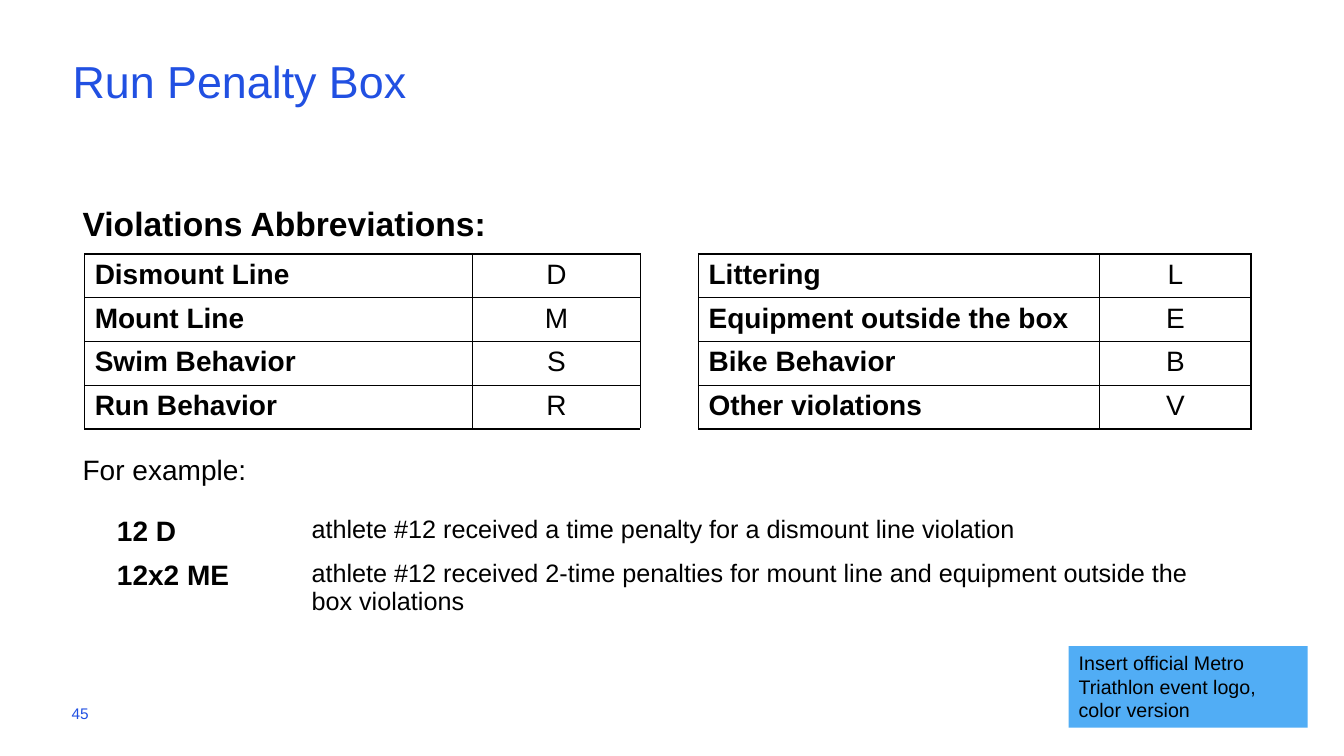
"""Build the Run Penalty Box slide with its violation and example tables."""
from dataclasses import dataclass

from lxml.etree import SubElement
from pptx import Presentation
from pptx.dml.color import RGBColor
from pptx.enum.shapes import MSO_SHAPE
from pptx.enum.text import MSO_ANCHOR, MSO_AUTO_SIZE, PP_ALIGN
from pptx.oxml.ns import qn
from pptx.util import Inches, Pt

TITLE = "Run Penalty Box"
HEADING = "Violations Abbreviations:"
EXAMPLE_HEADING = "For example:"
PAGE_NUMBER = "45"
LOGO_NOTE = ["Insert official Metro Triathlon event logo,", "color version"]
VIOLATIONS = [
    ("Dismount Line", "D", "", "Littering", "L"),
    ("Mount Line", "M", "", "Equipment outside the box", "E"),
    ("Swim Behavior", "S", "", "Bike Behavior", "B"),
    ("Run Behavior", "R", "", "Other violations", "V"),
]
EXAMPLES = [
    ("12 D", "athlete #12 received a time penalty for a dismount line violation"),
    ("12x2 ME", "athlete #12 received 2-time penalties for mount line and "
                "equipment outside the box violations"),
]


@dataclass(frozen=True)
class Theme:
    """Colours, font and type sizes of the slide."""
    font: str = "Arial"
    blue: str = "2150E2"
    panel: str = "51ADF5"
    black: str = "000000"
    title: int = 32
    heading: int = 24
    body: int = 20
    detail: int = 18
    note: int = 14
    number: int = 11


THEME = Theme()
WIDTH, HEIGHT = Inches(13.33), Inches(7.5)

# Percentages of the slide: left, top, width, height
TITLE_BOX = (5.4, 3.47, 86.27, 15.2)
BODY_BOX = (5.4, 24, 90.77, 41.6)
NUMBER_BOX = (5.33, 91.73, 22.5, 5.33)
LOGO_BOX = (79.52, 85.47, 17.78, 10.8)
VIOLATIONS_ORIGIN, VIOLATIONS_COLUMNS = (6.3, 33.6), (28.88, 12.45, 4.35, 29.86, 11.25)
VIOLATIONS_ROWS = (5.77,) * len(VIOLATIONS)
EXAMPLES_ORIGIN, EXAMPLES_COLUMNS = (7.95, 67.6), (14.48, 69.77)
EXAMPLES_ROWS = (5.6, 9.47)
GAP_COLUMN = 2


def across(share):
    return int(WIDTH * share / 100)


def down(share):
    return int(HEIGHT * share / 100)


def place(box):
    left, top, width, height = box
    return across(left), down(top), across(width), down(height)


def move(shape, box):
    shape.left, shape.top, shape.width, shape.height = place(box)


def write(frame, text, size, color=THEME.black, bold=False, align=PP_ALIGN.LEFT,
          spacing=None, before=0, plain=False):
    paragraph = frame.paragraphs[0]
    if paragraph.runs:
        paragraph = frame.add_paragraph()
    if plain:
        properties = paragraph._p.get_or_add_pPr()
        properties.set("marL", "0")
        properties.set("indent", "0")
        SubElement(properties, qn("a:buNone"))
    paragraph.alignment = align
    paragraph.line_spacing = spacing
    paragraph.space_before = Pt(before)
    run = paragraph.add_run()
    run.text = text
    run.font.name = THEME.font
    run.font.size = Pt(size)
    run.font.bold = bold
    run.font.color.rgb = RGBColor.from_string(color)


def draw_borders(cell, sides):
    properties = cell._tc.get_or_add_tcPr()
    for side in sides:
        line = SubElement(properties, qn(f"a:ln{side}"), w=str(Pt(1)))
        fill = SubElement(line, qn("a:solidFill"))
        SubElement(fill, qn("a:srgbClr"), val=THEME.black)


def add_grid(slide, origin, columns, rows):
    box = (*origin, sum(columns), sum(rows))
    table = slide.shapes.add_table(len(rows), len(columns), *place(box)).table
    table.first_row = table.horz_banding = False
    for column, share in zip(table.columns, columns):
        column.width = across(share)
    for row, share in zip(table.rows, rows):
        row.height = down(share)
    return table


def add_violations(slide):
    table = add_grid(slide, VIOLATIONS_ORIGIN, VIOLATIONS_COLUMNS, VIOLATIONS_ROWS)
    for row, entries in enumerate(VIOLATIONS):
        for column, text in enumerate(entries):
            cell = table.cell(row, column)
            draw_borders(cell, "LR" if column == GAP_COLUMN else "LRTB")
            cell.fill.background()
            if text:
                is_code = len(text) == 1
                write(cell.text_frame, text, THEME.body, bold=not is_code,
                      align=PP_ALIGN.CENTER if is_code else PP_ALIGN.LEFT)
    table.cell(0, GAP_COLUMN).merge(table.cell(len(VIOLATIONS) - 1, GAP_COLUMN))


def add_examples(slide):
    table = add_grid(slide, EXAMPLES_ORIGIN, EXAMPLES_COLUMNS, EXAMPLES_ROWS)
    for row, (code, meaning) in enumerate(EXAMPLES):
        write(table.cell(row, 0).text_frame, code, THEME.body, bold=True)
        write(table.cell(row, 1).text_frame, meaning, THEME.detail)
        for column in range(2):
            table.cell(row, column).fill.background()


def add_title_and_body(slide):
    title, body = slide.shapes.title, slide.placeholders[1]
    for shape, box in ((title, TITLE_BOX), (body, BODY_BOX)):
        move(shape, box)
        shape.text_frame.auto_size = MSO_AUTO_SIZE.NONE
    title.text_frame.margin_left = 0
    title.text_frame.vertical_anchor = MSO_ANCHOR.MIDDLE
    write(title.text_frame, TITLE, THEME.title, THEME.blue, spacing=0.9)
    write(body.text_frame, HEADING, THEME.heading, bold=True, spacing=1.4, plain=True)
    write(body.text_frame, EXAMPLE_HEADING, THEME.body, spacing=1.4, before=140, plain=True)


def add_page_number(slide):
    frame = slide.shapes.add_textbox(*place(NUMBER_BOX)).text_frame
    frame.word_wrap = True
    frame.margin_left = 0
    frame.vertical_anchor = MSO_ANCHOR.MIDDLE
    write(frame, PAGE_NUMBER, THEME.number, THEME.blue)


def add_logo_note(slide):
    panel = slide.shapes.add_shape(MSO_SHAPE.RECTANGLE, *place(LOGO_BOX))
    panel.shadow.inherit = False
    panel.fill.solid()
    panel.fill.fore_color.rgb = RGBColor.from_string(THEME.panel)
    panel.line.fill.background()
    panel.text_frame.word_wrap = True
    panel.text_frame.vertical_anchor = MSO_ANCHOR.TOP
    for text in LOGO_NOTE:
        write(panel.text_frame, text, THEME.note)


def main():
    presentation = Presentation()
    presentation.slide_width, presentation.slide_height = WIDTH, HEIGHT
    slide = presentation.slides.add_slide(presentation.slide_layouts[1])
    add_title_and_body(slide)
    add_page_number(slide)
    add_logo_note(slide)
    add_examples(slide)
    add_violations(slide)
    presentation.save("out.pptx")


if __name__ == "__main__":
    main()
